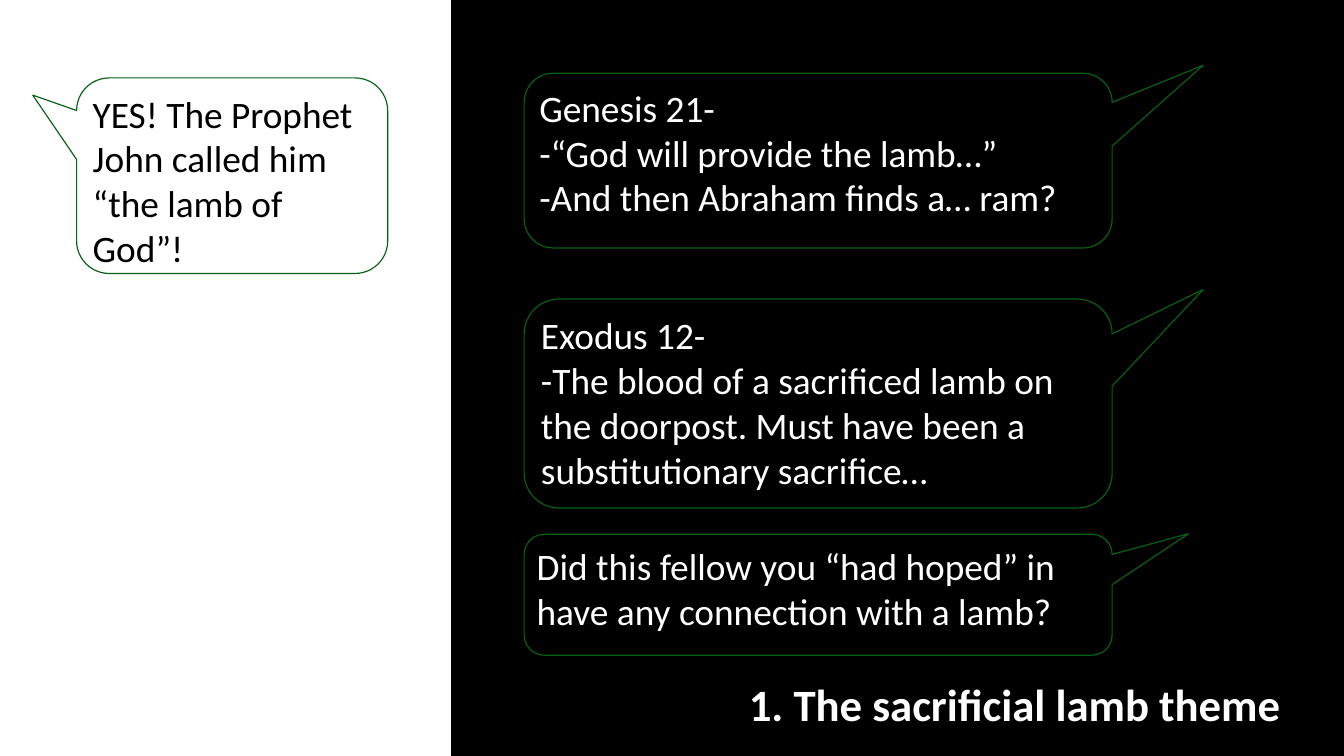
from typing import NamedTuple

from pptx import Presentation
from pptx.dml.color import RGBColor
from pptx.enum.shapes import MSO_SHAPE as Shape
from pptx.enum.text import MSO_ANCHOR as Anchor, MSO_AUTO_SIZE as AutoSize, PP_ALIGN as Align
from pptx.util import Inches, Pt

BLACK = RGBColor(0x00, 0x00, 0x00)
WHITE = RGBColor(0xFF, 0xFF, 0xFF)
GREEN = RGBColor(0x05, 0x62, 0x14)
FONT = "Calibri"
WIDTH, HEIGHT = Inches(20), Inches(11.25)


class Area(NamedTuple):
    """A place in percent of the slide's width and height."""
    left: float
    top: float
    width: float
    height: float

    def lengths(self) -> tuple[int, int, int, int]:
        return (round(WIDTH * self.left / 100), round(HEIGHT * self.top / 100),
                round(WIDTH * self.width / 100), round(HEIGHT * self.height / 100))


class Panel(NamedTuple):
    area: Area
    color: RGBColor
    line_width: float


class Callout(NamedTuple):
    area: Area
    tip: tuple[float, float]
    fill: RGBColor
    ink: RGBColor
    lines: tuple[str, ...]


SPLIT = 33.5
PANELS = (
    Panel(Area(SPLIT, 0, 100 - SPLIT, 100), BLACK, 1.25),
    Panel(Area(0, 0, SPLIT, 100), WHITE, 0.75),
)

QUESTION_LEFT, QUESTION_WIDTH = 39, 43.75
TIP_RIGHT = (0.655, -0.546)


def question(top: float, height: float, tip: tuple[float, float], *lines: str) -> Callout:
    return Callout(Area(QUESTION_LEFT, top, QUESTION_WIDTH, height), tip, BLACK, WHITE, lines)


CALLOUTS = (
    question(9.69, 23.11, TIP_RIGHT, "Genesis 21-", "-“God will provide the lamb…”",
             "-And then Abraham finds a… ram?"),
    question(39.56, 27.64, TIP_RIGHT, "Exodus 12-",
             "-The blood of a sacrificed lamb on the doorpost. "
             "Must have been a substitutionary sacrifice…"),
    question(70.67, 16, (0.63, -0.505),
             "Did this fellow you “had hoped” in have any connection with a lamb?"),
    Callout(Area(5.7, 10.31, 23.15, 25.87), (-0.641, -0.412), WHITE, BLACK,
            ("YES! The Prophet John called him “the lamb of God”!",)),
)


def add_filled_shape(page, kind: Shape, area: Area, fill: RGBColor, line: RGBColor,
                     line_width: float):
    shape = page.shapes.add_shape(kind, *area.lengths())
    shape.shadow.inherit = False
    shape.fill.solid()
    shape.fill.fore_color.rgb = fill
    shape.line.color.rgb = line
    shape.line.width = Pt(line_width)
    return shape


def write_lines(frame, lines: tuple[str, ...], size: float, ink: RGBColor,
                align: Align, bold: bool = False) -> None:
    frame.word_wrap = True
    frame.vertical_anchor = Anchor.TOP
    for index, line in enumerate(lines):
        para = frame.add_paragraph() if index else frame.paragraphs[0]
        para.alignment = align
        span = para.add_run()
        span.text = line
        span.font.name = FONT
        span.font.size = Pt(size)
        span.font.bold = bold
        span.font.color.rgb = ink


def add_callout(page, callout: Callout) -> None:
    shape = add_filled_shape(page, Shape.ROUNDED_RECTANGULAR_CALLOUT, callout.area,
                             callout.fill, GREEN, 1.25)
    shape.adjustments[0], shape.adjustments[1] = callout.tip
    write_lines(shape.text_frame, callout.lines, 40, callout.ink, Align.LEFT)


def place_title(page, text: str) -> None:
    """Fill the title placeholder and bring it in front of the panels."""
    title = page.shapes.title
    title.left, title.top, title.width, title.height = Area(SPLIT, 89.07, 62.3, 8.09).lengths()
    write_lines(title.text_frame, (text,), 48, WHITE, Align.RIGHT, bold=True)
    title.text_frame.auto_size = AutoSize.SHAPE_TO_FIT_TEXT
    page.shapes._spTree.append(title._element)


def main() -> None:
    deck = Presentation()
    deck.slide_width, deck.slide_height = WIDTH, HEIGHT
    page = deck.slides.add_slide(deck.slide_layouts.get_by_name("Title Only"))
    page.background.fill.solid()
    page.background.fill.fore_color.rgb = BLACK
    for panel in PANELS:
        add_filled_shape(page, Shape.RECTANGLE, panel.area, panel.color, panel.color,
                         panel.line_width)
    for callout in CALLOUTS:
        add_callout(page, callout)
    place_title(page, "1. The sacrificial lamb theme")
    deck.save("out.pptx")


if __name__ == "__main__":
    main()
